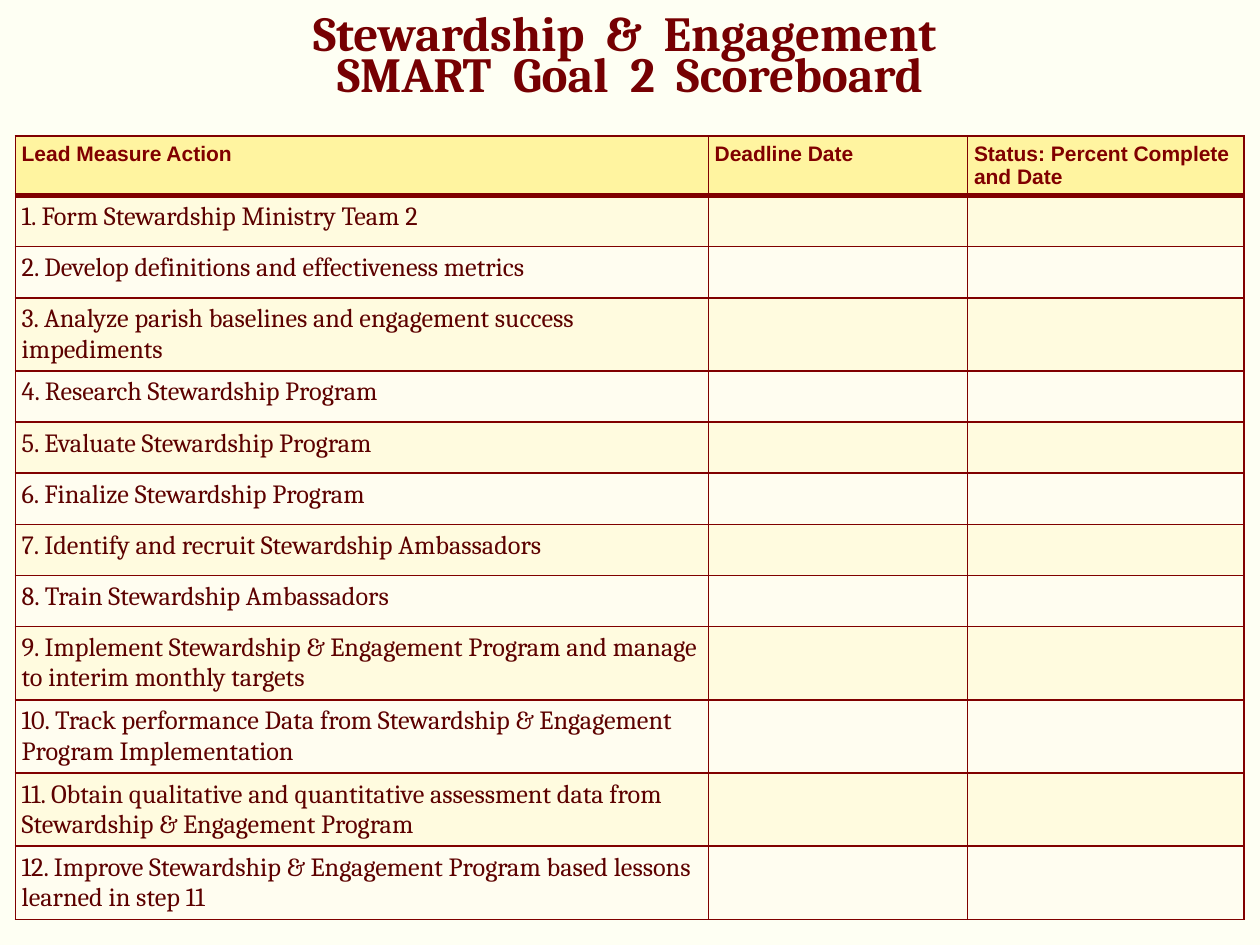
from dataclasses import dataclass

from lxml.etree import SubElement
from pptx import Presentation
from pptx.dml.color import RGBColor
from pptx.enum.text import MSO_ANCHOR, PP_ALIGN
from pptx.oxml.ns import qn
from pptx.slide import Slide
from pptx.table import _Cell
from pptx.text.text import _Paragraph
from pptx.util import Pt


@dataclass(frozen=True)
class TextStyle:
    font: str
    size: float
    color: str
    bold: bool = False


@dataclass(frozen=True)
class Theme:
    background: str = "FEFFF3"
    header_fill: str = "FFF4A0"
    band_fills: tuple[str, str] = ("FFFBDF", "FFFDF0")
    border: str = "800000"
    thin: float = 1
    thick: float = 3
    title: TextStyle = TextStyle("Cambria", 28, "760002", True)
    header: TextStyle = TextStyle("Arial", 12, "800000", True)
    body: TextStyle = TextStyle("Cambria", 15, "5D0100")


@dataclass(frozen=True)
class TableRow:
    texts: tuple[str, ...]
    fill: str
    style: TextStyle
    top: float
    bottom: float


THEME = Theme()
TITLE_LINES = ("Stewardship  &  Engagement ", "SMART  Goal  2  Scoreboard")
HEADERS = ("Lead Measure Action", "Deadline Date", "Status: Percent Complete and Date")
ACTIONS = (
    "Form Stewardship Ministry Team 2",
    "Develop definitions and effectiveness metrics",
    "Analyze parish baselines and engagement success impediments",
    "Research Stewardship Program",
    "Evaluate Stewardship Program",
    "Finalize Stewardship Program",
    "Identify and recruit Stewardship Ambassadors",
    "Train Stewardship Ambassadors",
    "Implement Stewardship & Engagement Program and manage to interim monthly targets",
    "Track performance Data from Stewardship & Engagement Program Implementation",
    "Obtain qualitative and quantitative assessment data from Stewardship & Engagement Program",
    "Improve Stewardship & Engagement Program based lessons learned in step 11",
)
COLUMN_WIDTHS = (396, 148.2, 157.8)
ROW_HEIGHT = 29.25
CELL_MARGIN = 3.6


def style_runs(paragraph: _Paragraph, style: TextStyle) -> None:
    for run in paragraph.runs:
        run.font.name = style.font
        run.font.size = Pt(style.size)
        run.font.bold = style.bold
        run.font.color.rgb = RGBColor.from_string(style.color)


def add_border(cell: _Cell, side: str, width: float) -> None:
    properties = cell._tc.get_or_add_tcPr()
    line = SubElement(properties, qn(f"a:ln{side}"), w=str(Pt(width)))
    fill = SubElement(line, qn("a:solidFill"))
    SubElement(fill, qn("a:srgbClr"), val=THEME.border)


def draw_cell(cell: _Cell, text: str, row: TableRow) -> None:
    cell.margin_left = cell.margin_right = Pt(CELL_MARGIN)
    cell.margin_top = cell.margin_bottom = Pt(CELL_MARGIN)
    widths = {"L": THEME.thin, "R": THEME.thin, "T": row.top, "B": row.bottom}
    for side, width in widths.items():
        add_border(cell, side, width)
    cell.fill.solid()
    cell.fill.fore_color.rgb = RGBColor.from_string(row.fill)
    if text:
        cell.text_frame.text = text
        style_runs(cell.text_frame.paragraphs[0], row.style)


def scoreboard_rows() -> list[TableRow]:
    rows = [TableRow(HEADERS, THEME.header_fill, THEME.header, THEME.thin, THEME.thick)]
    for index, action in enumerate(ACTIONS):
        rows.append(TableRow(
            (f"{index + 1}. {action}", "", ""),
            THEME.band_fills[index % 2],
            THEME.body,
            THEME.thick if index == 0 else THEME.thin,
            THEME.thin,
        ))
    return rows


def draw_scoreboard(slide: Slide) -> None:
    rows = scoreboard_rows()
    table = slide.shapes.add_table(
        len(rows), len(COLUMN_WIDTHS), Pt(8.8), Pt(77.6),
        Pt(sum(COLUMN_WIDTHS)), Pt(ROW_HEIGHT * len(rows)),
    ).table
    table.horz_banding = False
    for column, width in zip(table.columns, COLUMN_WIDTHS):
        column.width = Pt(width)
    for table_row, row in zip(table.rows, rows):
        table_row.height = Pt(ROW_HEIGHT)
        for cell, text in zip(table_row.cells, row.texts):
            draw_cell(cell, text, row)


def draw_title(slide: Slide) -> None:
    text_box = slide.shapes.add_textbox(Pt(77), Pt(0.7), Pt(566), Pt(90))
    text_frame = text_box.text_frame
    text_frame.word_wrap = True
    text_frame.vertical_anchor = MSO_ANCHOR.MIDDLE
    text_frame.margin_bottom = Pt(27)
    text_frame.text = "\n".join(TITLE_LINES)
    for paragraph in text_frame.paragraphs:
        paragraph.alignment = PP_ALIGN.CENTER
        paragraph.line_spacing = 0.7
        style_runs(paragraph, THEME.title)


def main() -> None:
    presentation = Presentation()
    presentation.slide_width = Pt(720)
    presentation.slide_height = Pt(540)
    slide = presentation.slides.add_slide(presentation.slide_layouts[6])
    slide.background.fill.solid()
    slide.background.fill.fore_color.rgb = RGBColor.from_string(THEME.background)
    draw_scoreboard(slide)
    draw_title(slide)
    presentation.save("out.pptx")


if __name__ == "__main__":
    main()
